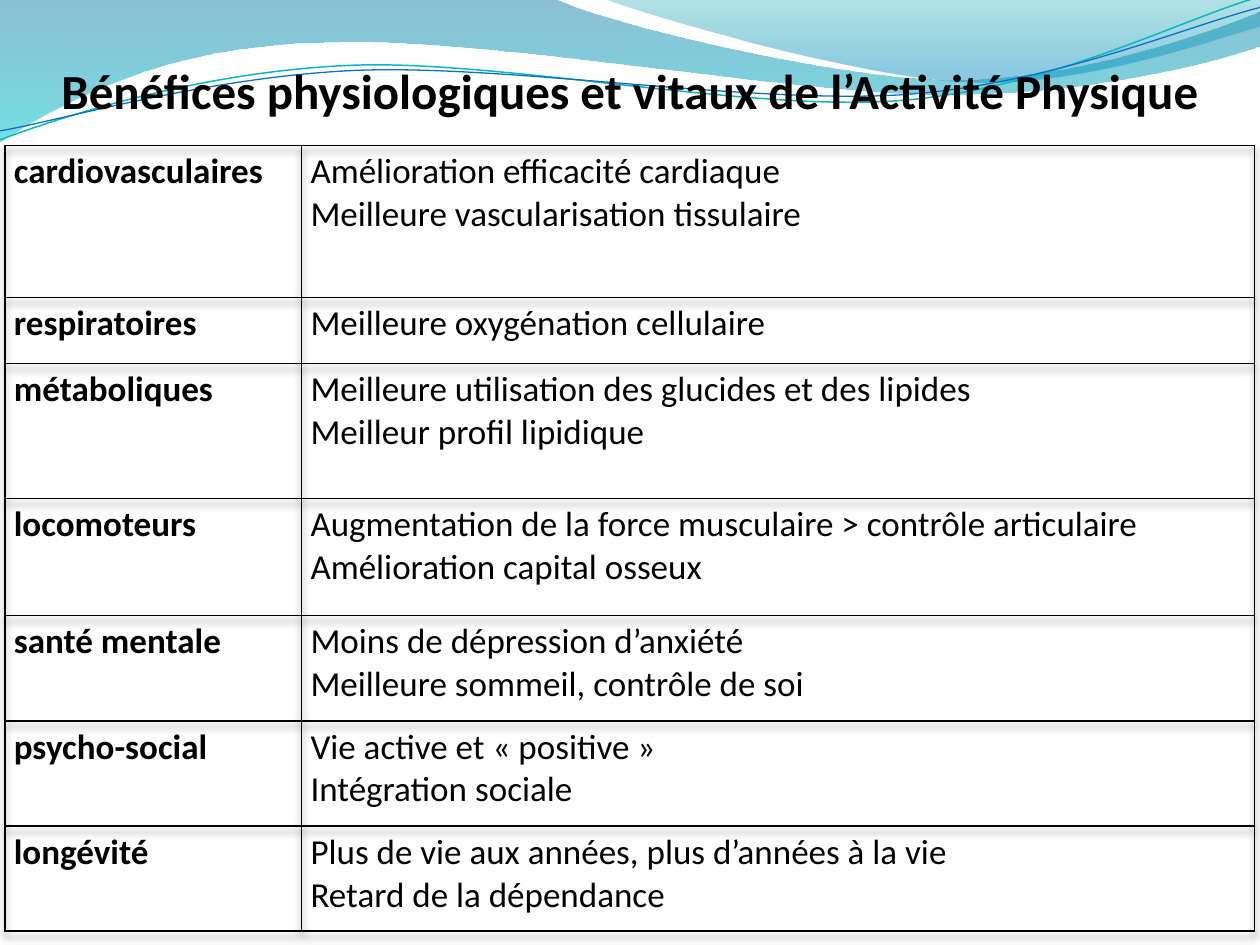
"""Build the slide on the physiological and vital benefits of physical activity."""
from dataclasses import dataclass
from math import cos, radians, sin

from lxml import etree
from pptx import Presentation
from pptx.dml.color import RGBColor
from pptx.enum.text import PP_ALIGN
from pptx.oxml.ns import qn
from pptx.util import Cm, Pt

LEFT, CENTER = PP_ALIGN.LEFT, PP_ALIGN.CENTER


@dataclass(frozen=True)
class Theme:
    font: str = "Calibri"
    ink: str = "000000"
    title_size: float = 28
    body_size: float = 20
    border: float = 1
    shadow_blur: float = 4
    shadow_distance: float = 3
    shadow_opacity: int = 40
    back_wave: tuple = ((0, "0074A1", 45), (1, "00C6CF", 55))
    front_wave: tuple = ((0, "00A1A9", 30), (0.8, "008BBF", 45))
    upper_strand: tuple = ("0AB8BF", 0.85)
    lower_strand: tuple = ("0F6FC6", 0.75)


THEME = Theme()

TITLE = "Bénéfices physiologiques et vitaux de l’Activité Physique"
BENEFITS = [
    ("cardiovasculaires", 3.07, ["Amélioration efficacité cardiaque", "Meilleure vascularisation tissulaire"]),
    ("respiratoires", 1.33, ["Meilleure oxygénation cellulaire"]),
    ("métaboliques", 2.72, ["Meilleure utilisation des glucides et des lipides", "Meilleur profil lipidique"]),
    ("locomoteurs", 2.36, ["Augmentation de la force musculaire > contrôle articulaire",
                           "Amélioration capital osseux"]),
    ("santé mentale", 2.12, ["Moins de dépression d’anxiété", "Meilleure sommeil, contrôle de soi"]),
    ("psycho-social", 2.12, ["Vie active et « positive »", "Intégration sociale"]),
    ("longévité", 2.12, ["Plus de vie aux années, plus d’années à la vie", "Retard de la dépendance"]),
]
COLUMN_WIDTHS = (5.98, 19.21)
TABLE_LEFT, TABLE_TOP = 0.1, 2.93
TITLE_TOP, TITLE_HEIGHT = 1.12, 1.4
MARGIN_X, MARGIN_Y = 0.18, 0.1
STRAND_TILT = -2.7

BACK_WAVE = ((-0.03, -0.03, 25.45, 2.9), [
    [(0, -0.03)],
    [(11.18, -0.03)],
    [(12.09, 0.43), (16.87, 1.6), (19.25, 1.6)],
    [(21.67, 1.6), (24.33, 0.66), (25.4, 0.23)],
    [(25.43, 0.91)],
    [(24.97, 1.12), (22.1, 1.93), (18.95, 1.9)],
    [(15.8, 1.9), (9.7, 0.71), (6.53, 0.86)],
    [(3.28, 0.89), (1.17, 2.11), (-0.03, 2.87)],
    [(0, -0.03)],
])
FRONT_WAVE = ((12.17, -0.03, 13.23, 1.78), [
    [(12.17, -0.03)],
    [(12.93, 0.28), (17.32, 1.57), (19.53, 1.65)],
    [(21.74, 1.75), (24.41, 0.81), (25.4, 0.53)],
    [(25.4, 0)],
    [(12.17, -0.03)],
])
UPPER_STRAND = ((-0.05, 0.56, 25.45, 1.8), [
    [(0, 2.82)],
    [(1.22, 2.36), (4.01, 1.45), (7.04, 1.32)],
    [(10.03, 1.19), (15.06, 2.26), (18.11, 2.03)],
    [(21.16, 1.8), (23.83, 0.38), (25.35, -0.05)],
])
LOWER_STRAND = ((-0.05, 0.76, 25.48, 1.47), [
    [(0, 2.64)],
    [(1.19, 2.44), (4.17, 1.55), (7.19, 1.42)],
    [(10.24, 1.3), (15.16, 2.11), (18.21, 1.91)],
    [(21.23, 1.7), (23.9, 0.53), (25.4, 0.15)],
])


def write(frame, lines, *, size=THEME.body_size, bold=False, align=LEFT):
    frame.word_wrap = True
    for index, line in enumerate(lines):
        paragraph = frame.add_paragraph() if index else frame.paragraphs[0]
        paragraph.alignment = align
        run = paragraph.add_run()
        run.text = line
        run.font.name, run.font.size, run.font.bold = THEME.font, Pt(size), bold
        run.font.color.rgb = RGBColor.from_string(THEME.ink)


def set_margins(holder):
    holder.margin_left = holder.margin_right = Cm(MARGIN_X)
    holder.margin_top = holder.margin_bottom = Cm(MARGIN_Y)


def to_local(point, frame, tilt):
    left, top, width, height = frame
    dx, dy = point[0] - left - width / 2, point[1] - top - height / 2
    cosine, sine = cos(radians(-tilt)), sin(radians(-tilt))
    return Cm(dx * cosine - dy * sine + width / 2), Cm(dx * sine + dy * cosine + height / 2)


def draw_outline(slide, frame, segments, tilt=0):
    local = [[to_local(point, frame, tilt) for point in segment] for segment in segments]
    builder = slide.shapes.build_freeform(*local[0][0])
    builder.add_line_segments([segment[-1] for segment in local[1:]], close=not tilt)
    outline = builder.convert_to_shape()
    outline.left, outline.top, outline.width, outline.height = map(Cm, frame)
    outline.rotation = tilt
    outline.shadow.inherit = False
    geometry = next(outline.element.iter(qn("a:path")))
    geometry.set("w", str(outline.width))
    geometry.set("h", str(outline.height))
    for step, segment in zip(list(geometry), local):
        for old_point in list(step):
            step.remove(old_point)
        if len(segment) == 3:
            curve = etree.Element(qn("a:cubicBezTo"))
            geometry.replace(step, curve)
            step = curve
        for x, y in segment:
            etree.SubElement(step, qn("a:pt"), x=str(x), y=str(y))
    return outline


def add_wave(slide, frame, segments, stops):
    wave = draw_outline(slide, frame, segments)
    wave.line.fill.background()
    wave.fill.gradient()
    wave.fill.gradient_angle = 270
    for stop, (position, color, _) in zip(wave.fill.gradient_stops, stops):
        stop.position = position
        stop.color.rgb = RGBColor.from_string(color)
    for tint, (_, _, opacity) in zip(wave.element.spPr.iter(qn("a:srgbClr")), stops):
        etree.SubElement(tint, qn("a:alpha"), val=str(opacity * 1000))


def add_strand(slide, frame, segments, color, width):
    strand = draw_outline(slide, frame, segments, STRAND_TILT)
    strand.fill.background()
    strand.line.color.rgb = RGBColor.from_string(color)
    strand.line.width = Pt(width)


def add_title(slide):
    title = slide.shapes.add_textbox(Cm(TABLE_LEFT), Cm(TITLE_TOP), Cm(sum(COLUMN_WIDTHS)), Cm(TITLE_HEIGHT))
    set_margins(title.text_frame)
    write(title.text_frame, [TITLE], size=THEME.title_size, bold=True, align=CENTER)


def style_cell(cell):
    set_margins(cell)
    properties = cell._tc.get_or_add_tcPr()
    for side in ("a:lnL", "a:lnR", "a:lnT", "a:lnB"):
        border = etree.SubElement(properties, qn(side), w=str(Pt(THEME.border)))
        etree.SubElement(etree.SubElement(border, qn("a:solidFill")), qn("a:srgbClr"), val=THEME.ink)
    cell.fill.background()


def add_table_shadow(table):
    effects = etree.Element(qn("a:effectLst"))
    shadow = etree.SubElement(effects, qn("a:outerShdw"), blurRad=str(Pt(THEME.shadow_blur)),
                              dist=str(Pt(THEME.shadow_distance)), dir="5400000", rotWithShape="0")
    tint = etree.SubElement(shadow, qn("a:srgbClr"), val=THEME.ink)
    etree.SubElement(tint, qn("a:alpha"), val=str(THEME.shadow_opacity * 1000))
    table._tbl.tblPr.insert(0, effects)


def add_benefits(slide):
    height = sum(row_height for _, row_height, _ in BENEFITS)
    table = slide.shapes.add_table(len(BENEFITS), len(COLUMN_WIDTHS), Cm(TABLE_LEFT), Cm(TABLE_TOP),
                                   Cm(sum(COLUMN_WIDTHS)), Cm(height)).table
    table.first_row = table.horz_banding = False
    add_table_shadow(table)
    for column, width in zip(table.columns, COLUMN_WIDTHS):
        column.width = Cm(width)
    for row, (domain, row_height, effects) in zip(table.rows, BENEFITS):
        row.height = Cm(row_height)
        for cell, lines, bold in zip(row.cells, ([domain], effects), (True, False)):
            style_cell(cell)
            write(cell.text_frame, lines, bold=bold)


deck = Presentation()
deck.slide_width, deck.slide_height = Cm(25.4), Cm(19.05)
benefits_slide = deck.slides.add_slide(deck.slide_layouts[6])
add_wave(benefits_slide, *BACK_WAVE, THEME.back_wave)
add_wave(benefits_slide, *FRONT_WAVE, THEME.front_wave)
add_strand(benefits_slide, *UPPER_STRAND, *THEME.upper_strand)
add_strand(benefits_slide, *LOWER_STRAND, *THEME.lower_strand)
add_title(benefits_slide)
add_benefits(benefits_slide)
deck.save("out.pptx")
